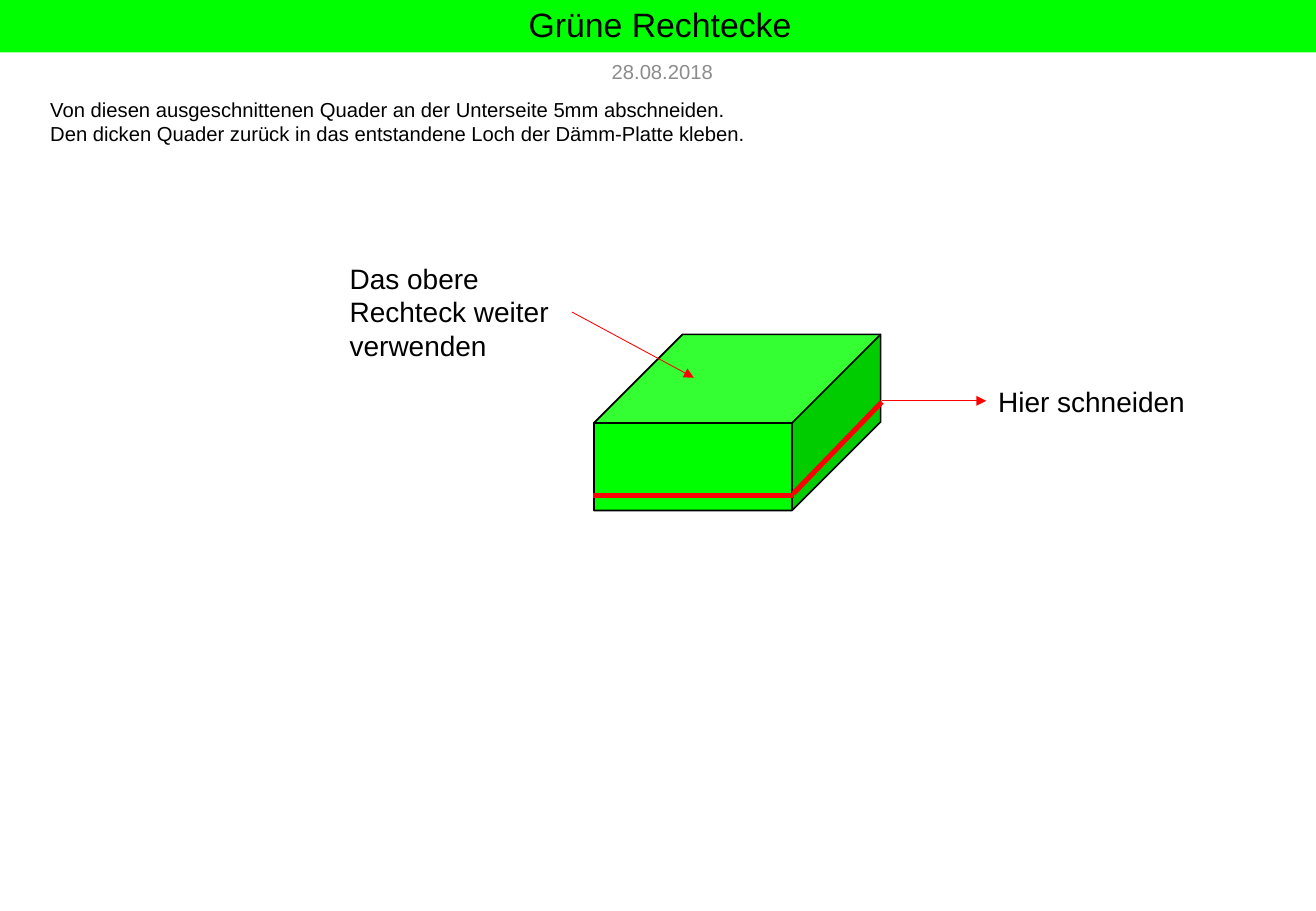
from dataclasses import dataclass

from lxml.etree import SubElement
from pptx import Presentation
from pptx.dml.color import RGBColor
from pptx.enum.shapes import MSO_CONNECTOR as Conn, MSO_SHAPE as Shape
from pptx.enum.text import MSO_ANCHOR as Anchor, MSO_AUTO_SIZE as AutoSize, PP_ALIGN as Align
from pptx.oxml.ns import qn
from pptx.slide import Slide
from pptx.text.text import TextFrame
from pptx.util import Pt

COLORS = {"green": "00FF00", "red": "FF0000", "black": "000000", "gray": "8C8C8C"}
FONT = "Arial"


@dataclass
class Label:
    lines: list[str]
    box: tuple[float, float, float, float]
    size: float
    color: str = "black"
    align: Align = Align.LEFT
    anchor: Anchor = Anchor.TOP


@dataclass
class Line:
    start: tuple[float, float]
    end: tuple[float, float]
    width: float
    arrow: bool = False


# Text and lines, lengths in points
TITLE = Label(["Grüne Rechtecke"], (0, 0, 782.6, 31), 20,
              align=Align.CENTER, anchor=Anchor.MIDDLE)
LABELS = [
    Label(["28.08.2018"], (345.8, 31, 93.6, 22.3), 12, "gray",
          Align.CENTER, Anchor.MIDDLE),
    Label(["Von diesen ausgeschnittenen Quader an der Unterseite 5mm abschneiden.",
           "Den dicken Quader zurück in das entstandene Loch der Dämm-Platte kleben."],
          (22.7, 54, 737.3, 56.9), 12),
    Label(["Hier schneiden"], (584.6, 224.3, 133.9, 27.4), 16.6),
    Label(["Das obere Rechteck weiter verwenden"], (200.2, 151.2, 139, 67.7), 16.6),
]
CUBE_BOX = (352.1, 198.2, 169.9, 104.4)
CUBE_DEPTH = 0.503
LINES = [
    Line((522.7, 237.6), (584.6, 237.6), 0.5, arrow=True),
    Line((351.4, 293.8), (470.9, 293.8), 3),
    Line((470.2, 292.6), (522.7, 238.3), 3),
    Line((339.1, 185), (411.3, 223.9), 0.5, arrow=True),
]


def rgb(name: str) -> RGBColor:
    return RGBColor.from_string(COLORS[name])


def write(tf: TextFrame, label: Label) -> None:
    tf.text = "\n".join(label.lines)
    tf.word_wrap = True
    tf.auto_size = AutoSize.NONE
    tf.vertical_anchor = label.anchor
    for p in tf.paragraphs:
        p.alignment = label.align
        p.font.name = FONT
        p.font.size = Pt(label.size)
        p.font.color.rgb = rgb(label.color)


def add_title(s: Slide, label: Label) -> None:
    sp = s.shapes.title
    sp.left, sp.top, sp.width, sp.height = map(Pt, label.box)
    sp.fill.solid()
    sp.fill.fore_color.rgb = rgb("green")
    write(sp.text_frame, label)
    sp.text_frame.paragraphs[0].line_spacing = 0.9


def add_label(s: Slide, label: Label) -> None:
    write(s.shapes.add_textbox(*map(Pt, label.box)).text_frame, label)


def add_cube(s: Slide) -> None:
    sp = s.shapes.add_shape(Shape.CUBE, *map(Pt, CUBE_BOX))
    sp.adjustments[0] = CUBE_DEPTH
    sp.shadow.inherit = False
    sp.fill.solid()
    sp.fill.fore_color.rgb = rgb("green")
    sp.line.color.rgb = rgb("black")
    sp.line.width = Pt(1)


def add_line(s: Slide, line: Line) -> None:
    cxn = s.shapes.add_connector(Conn.STRAIGHT, *map(Pt, line.start + line.end))
    cxn.line.color.rgb = rgb("red")
    cxn.line.width = Pt(line.width)
    sp_pr = cxn._element.spPr
    if line.arrow:
        SubElement(sp_pr.find(qn("a:ln")), qn("a:tailEnd"), type="triangle")
    SubElement(sp_pr, qn("a:effectLst"))


def main() -> None:
    prs = Presentation()
    prs.slide_width, prs.slide_height = Pt(780), Pt(540)
    s = prs.slides.add_slide(prs.slide_layouts[5])

    # Heading and notes
    add_title(s, TITLE)
    for label in LABELS:
        add_label(s, label)

    # Block with cutting line and arrows
    add_cube(s)
    for line in LINES:
        add_line(s, line)

    prs.save("out.pptx")


if __name__ == "__main__":
    main()
